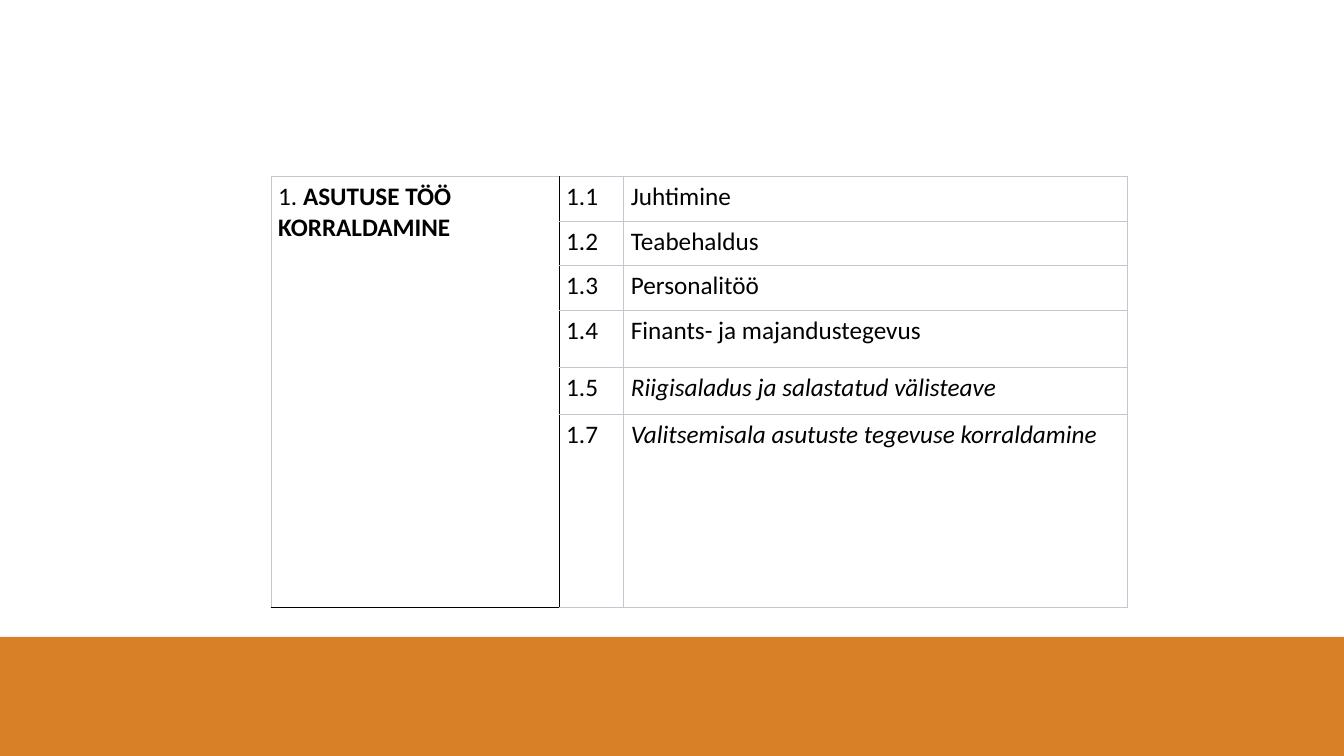
import dataclasses

import lxml.etree
import pptx
import pptx.dml.color
import pptx.enum.shapes
import pptx.oxml.ns
import pptx.table
import pptx.util

Cm = pptx.util.Cm
Pt = pptx.util.Pt


@dataclasses.dataclass(frozen=True)
class Theme:
    font: str = "Calibri"
    size: int = 18
    line: float = 0.5
    ink: str = "000000"
    paper: str = "FFFFFF"
    rule: str = "C1C7D0"
    band: str = "D78028"


@dataclasses.dataclass(frozen=True)
class Task:
    code: str
    name: str
    height: float
    slant: bool = False


THEME = Theme()
WIDTH, HEIGHT = 33.87, 19.05
BAND_TOP = 16.05
LEFT, TOP = 6.83, 4.45
COLS = (7.26, 1.63, 12.7)
TASKS = (
    Task("1.1", "Juhtimine", 1.12),
    Task("1.2", "Teabehaldus", 1.12),
    Task("1.3", "Personalitöö", 1.12),
    Task("1.4", "Finants- ja majandustegevus", 1.45),
    Task("1.5", "Riigisaladus ja salastatud välisteave", 1.17, True),
    Task("1.7", "Valitsemisala asutuste tegevuse korraldamine", 4.88, True),
)


def color(code: str) -> pptx.dml.color.RGBColor:
    return pptx.dml.color.RGBColor.from_string(code)


def edge(cell: pptx.table._Cell, side: str, code: str) -> None:
    """Add one border line to a cell."""
    qn = pptx.oxml.ns.qn
    props = cell._tc.get_or_add_tcPr()
    line = lxml.etree.SubElement(props, qn(f"a:ln{side}"), w=str(int(Pt(THEME.line))))
    fill = lxml.etree.SubElement(line, qn("a:solidFill"))
    lxml.etree.SubElement(fill, qn("a:srgbClr"), val=code)


def frame(cell: pptx.table._Cell, dark: str) -> None:
    """Set borders, fill and margins; the sides named in dark use ink."""
    for side in "LRTB":
        edge(cell, side, THEME.ink if side in dark else THEME.rule)
    cell.fill.solid()
    cell.fill.fore_color.rgb = color(THEME.paper)
    cell.margin_left = cell.margin_right = Cm(0.18)
    cell.margin_top = cell.margin_bottom = Cm(0.13)


def style(cell: pptx.table._Cell, slant: bool = False) -> None:
    for run in cell.text_frame.paragraphs[0].runs:
        run.font.name = THEME.font
        run.font.size = Pt(THEME.size)
        run.font.italic = slant
        run.font.color.rgb = color(THEME.ink)


def main() -> None:
    deck = pptx.Presentation()
    deck.slide_width, deck.slide_height = Cm(WIDTH), Cm(HEIGHT)
    slide = deck.slides.add_slide(deck.slide_layouts[6])

    # Bottom band
    band = slide.shapes.add_shape(
        pptx.enum.shapes.MSO_SHAPE.RECTANGLE,
        Cm(0), Cm(BAND_TOP), Cm(WIDTH), Cm(HEIGHT - BAND_TOP),
    )
    band.shadow.inherit = False
    band.fill.solid()
    band.fill.fore_color.rgb = color(THEME.band)
    band.line.fill.background()

    # Table grid
    table = slide.shapes.add_table(
        len(TASKS), len(COLS), Cm(LEFT), Cm(TOP),
        Cm(sum(COLS)), Cm(sum(task.height for task in TASKS)),
    ).table
    table.first_row = table.horz_banding = False
    for col, width in zip(table.columns, COLS):
        col.width = Cm(width)

    # Task rows
    for row, task in enumerate(TASKS):
        table.rows[row].height = Cm(task.height)
        head, code, name = (table.cell(row, col) for col in range(len(COLS)))
        frame(head, "RB" if row in (0, len(TASKS) - 1) else "R")
        frame(code, "L")
        frame(name, "")
        code.text_frame.text = task.code
        name.text_frame.text = task.name
        style(code)
        style(name, task.slant)

    # Function heading across all rows
    head = table.cell(0, 0)
    head.merge(table.cell(len(TASKS) - 1, 0))
    head.text_frame.text = "1. "
    title = head.text_frame.paragraphs[0].add_run()
    title.text = "ASUTUSE TÖÖ KORRALDAMINE"
    title.font.bold = True
    style(head)

    deck.save("out.pptx")


if __name__ == "__main__":
    main()
